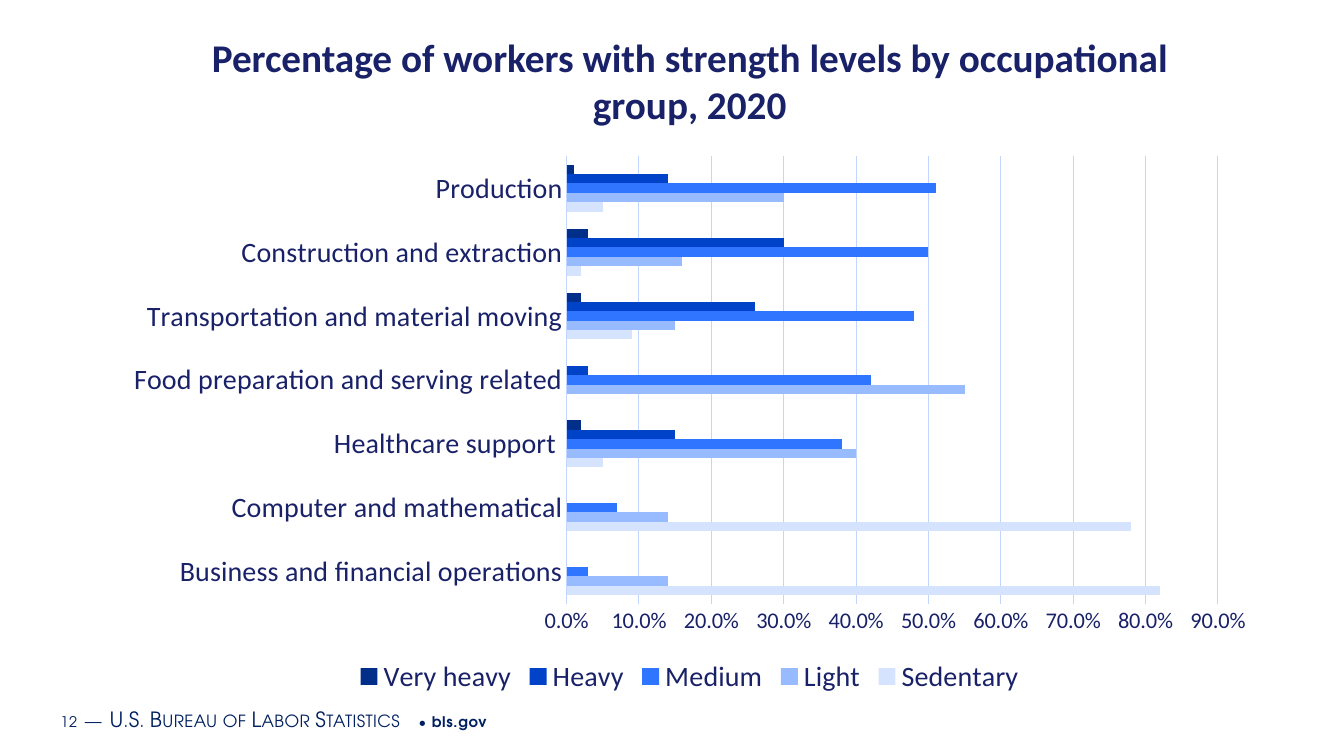
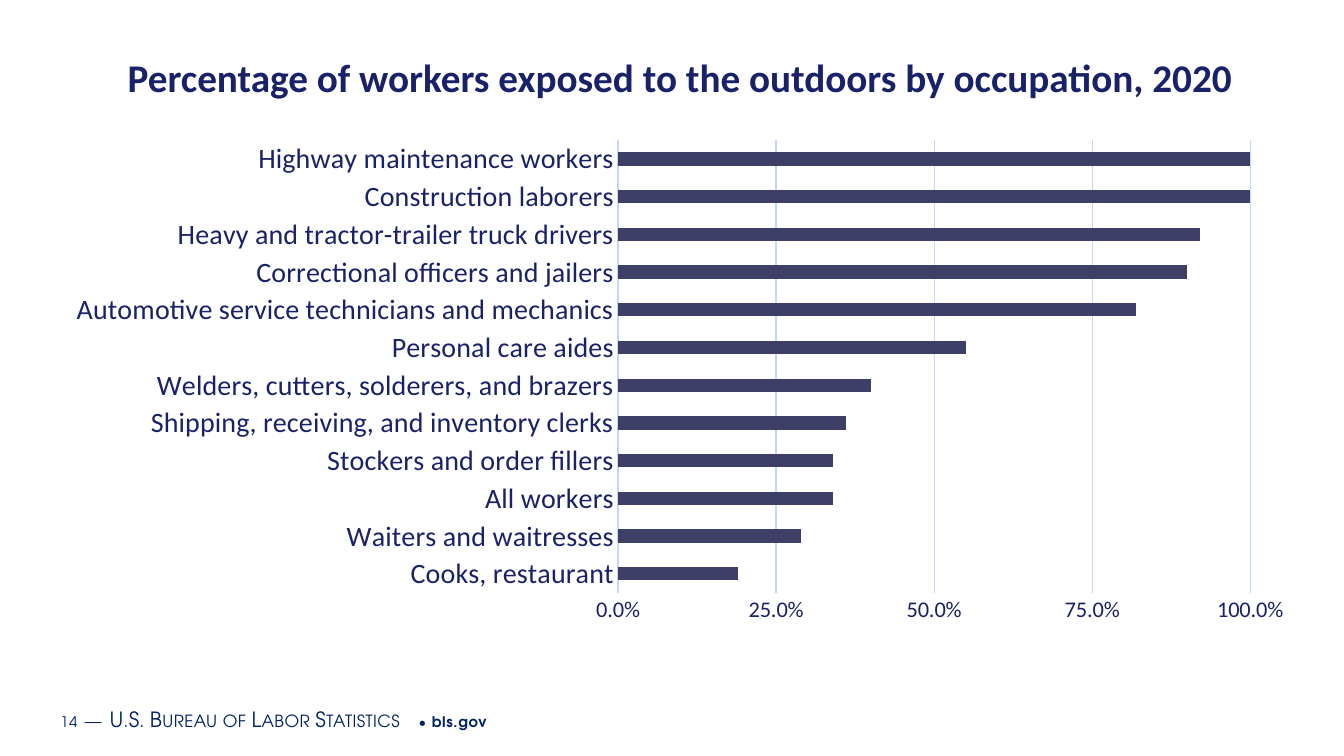
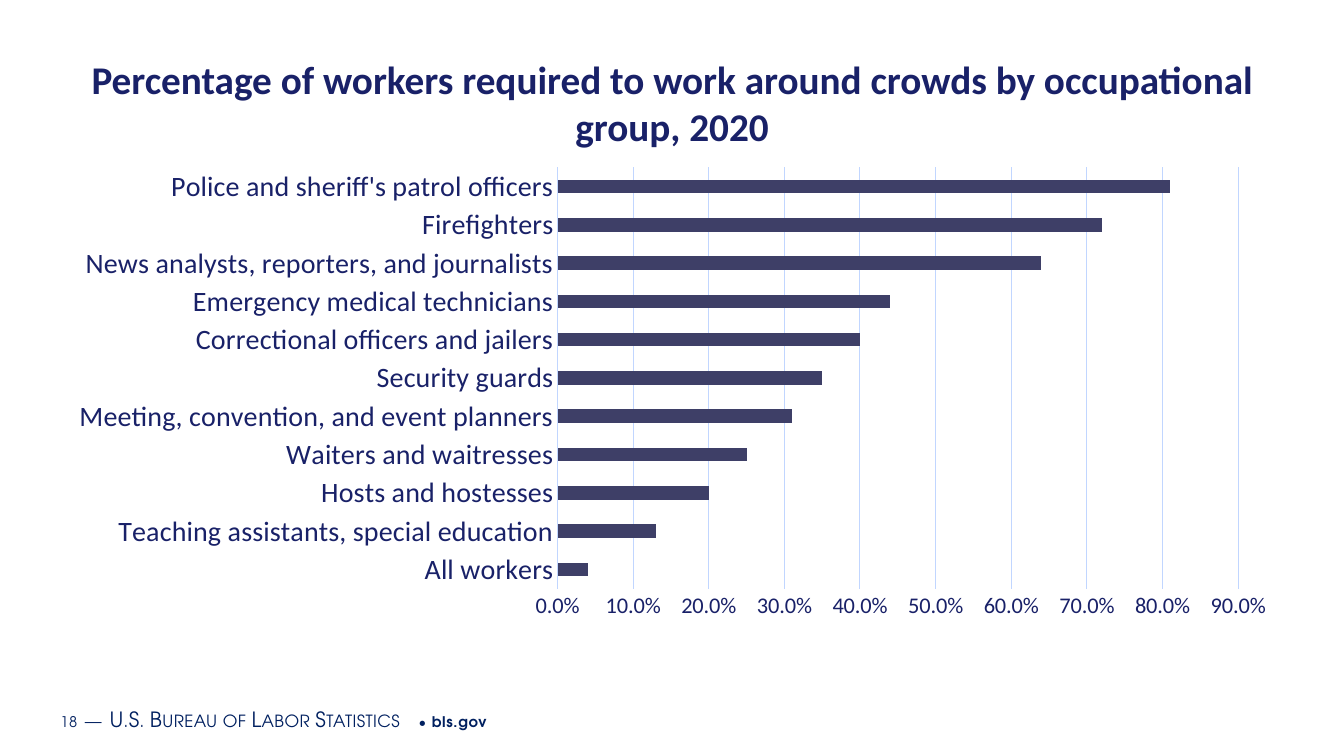
from lxml.etree import SubElement
from pptx import Presentation
from pptx.chart.data import CategoryChartData
from pptx.dml.color import RGBColor
from pptx.enum.chart import XL_CHART_TYPE, XL_LEGEND_POSITION, XL_TICK_MARK
from pptx.enum.text import MSO_ANCHOR, MSO_AUTO_SIZE, PP_ALIGN
from pptx.oxml.ns import qn
from pptx.util import Inches, Pt

COLOURS = {
    "title": "192168", "footer": "002060", "grid": "C1D6FF", "bar": "3E3F67",
    "Sedentary": "D6E3FF", "Light": "98BAFF", "Medium": "3075FF",
    "Heavy": "0042C8", "Very heavy": "002E89",
}
CHART_FONT = "Calibri"
FOOTER_FONT = "TeX Gyre Adventor"
FOOTER_BOX = (0.53, 6.93, 8.47, 0.4)

SLIDES = [
    {
        "number": "12",
        "title": "Percentage of workers with strength levels by occupational group, 2020",
        "title_box": (1.61, 0.16, 10.46, 1.28), "anchor": MSO_ANCHOR.MIDDLE,
        "chart_box": (1.1, 1.44, 11.48, 5.5), "plot_box": (5.62, 1.55, 6.46, 4.44),
        "scale": (0.9, 0.1, "0.0%"), "legend": True,
        "categories": [
            "Business and financial operations", "Computer and mathematical",
            "Healthcare support ", "Food preparation and serving related",
            "Transportation and material moving", "Construction and extraction",
            "Production"],
        "series": {
            "Sedentary": [0.82, 0.78, 0.05, None, 0.09, 0.02, 0.05],
            "Light": [0.14, 0.14, 0.4, 0.55, 0.15, 0.16, 0.3],
            "Medium": [0.03, 0.07, 0.38, 0.42, 0.48, 0.5, 0.51],
            "Heavy": [None, None, 0.15, 0.03, 0.26, 0.3, 0.14],
            "Very heavy": [None, None, 0.02, None, 0.02, 0.03, 0.01]},
    },
    {
        "number": "14",
        "title": "Percentage of workers exposed to the outdoors by occupation, 2020",
        "title_box": (0.92, 0.49, 11.64, 0.54), "anchor": MSO_ANCHOR.MIDDLE,
        "chart_box": (0.51, 1.29, 12.46, 5), "plot_box": (6.13, 1.39, 6.27, 4.49),
        "scale": (100, 25, r"0.0\%"), "legend": False,
        "categories": [
            "Cooks, restaurant", "Waiters and waitresses", "All workers",
            "Stockers and order fillers", "Shipping, receiving, and inventory clerks",
            "Welders, cutters, solderers, and brazers", "Personal care aides",
            "Automotive service technicians and mechanics",
            "Correctional officers and jailers", "Heavy and tractor-trailer truck drivers",
            "Construction laborers", "Highway maintenance workers"],
        "series": {"Series 1": [19, 29, 34, 34, 36, 40, 55, 82, 90, 92, 100, 100]},
    },
    {
        "number": "18",
        "title": "Percentage of workers required to work around crowds "
                 "by occupational group, 2020",
        "title_box": (0.54, 0.5, 12.25, 0.88), "anchor": MSO_ANCHOR.TOP,
        "chart_box": (0.54, 1.57, 12.25, 4.68), "plot_box": (5.53, 1.66, 6.75, 4.18),
        "scale": (90, 10, r"0.0\%"), "legend": False,
        "categories": [
            "All workers", "Teaching assistants, special education",
            "Hosts and hostesses", "Waiters and waitresses",
            "Meeting, convention, and event planners", "Security guards",
            "Correctional officers and jailers", "Emergency medical technicians",
            "News analysts, reporters, and journalists", "Firefighters",
            "Police and sheriff's patrol officers"],
        "series": {"Series 1": [4, 13, 20, 25, 31, 35, 40, 44, 64, 72, 81]},
    },
]


def set_values(target, **values):
    """Set each named attribute of the target."""
    for name, value in values.items():
        setattr(target, name, value)


def style_font(font, size, colour, name=CHART_FONT, bold=False):
    """Give a font its size, colour, family and weight."""
    set_values(font, size=Pt(size), name=name, bold=bold)
    font.color.rgb = RGBColor.from_string(COLOURS[colour])


def style_line(line):
    """Draw a chart line in the thin grid style."""
    line.color.rgb = RGBColor.from_string(COLOURS["grid"])
    line.width = Pt(0.75)


def add_title(page, text, box, anchor):
    """Place and format the title placeholder."""
    title = page.shapes.title
    left, top, width, height = map(Inches, box)
    set_values(title, left=left, top=top, width=width, height=height)
    frame = title.text_frame
    set_values(frame, word_wrap=True, auto_size=MSO_AUTO_SIZE.NONE, vertical_anchor=anchor)
    para = frame.paragraphs[0]
    para.alignment = PP_ALIGN.CENTER
    span = para.add_run()
    span.text = text
    style_font(span.font, 28, "title", bold=True)


def add_footer(page, number, box):
    """Write the page number, agency and address on one line."""
    frame = page.shapes.add_textbox(*map(Inches, box)).text_frame
    set_values(frame, word_wrap=True, vertical_anchor=MSO_ANCHOR.MIDDLE,
               margin_left=Inches(0.07), margin_right=Inches(0.07),
               margin_top=Inches(0.04), margin_bottom=Inches(0.04))
    para = frame.paragraphs[0]
    for text, size, small, bold in (
            (number, 10.5, False, False),
            (" ", 16, False, False),
            ("—", 15, True, False),
            (" ", 16, False, False),
            ("U.S. Bureau of Labor Statistics", 15, True, False),
            (" • ", 10.5, False, False),
            ("bls.gov", 10.5, False, True)):
        span = para.add_run()
        span.text = text
        style_font(span.font, size, "footer", FOOTER_FONT, bold)
        properties = span._r.get_or_add_rPr()
        properties.set("spc", "30" if small else "50")
        if small:
            properties.set("cap", "small")


def place_plot(chart, chart_box, plot_box):
    """Fix the inner plot area inside the chart's box."""
    area = chart._chartSpace.find(".//" + qn("c:plotArea"))
    for old in area.findall(qn("c:layout")):
        area.remove(old)
    layout = SubElement(area, qn("c:layout"))
    area.insert(0, layout)
    manual = SubElement(layout, qn("c:manualLayout"))
    left, top, width, height = chart_box
    plot_left, plot_top, plot_width, plot_height = plot_box
    for tag, value in (
            ("layoutTarget", "inner"), ("xMode", "edge"), ("yMode", "edge"),
            ("x", (plot_left - left) / width), ("y", (plot_top - top) / height),
            ("w", plot_width / width), ("h", plot_height / height)):
        SubElement(manual, qn("c:" + tag)).set("val", str(value))


def style_axes(chart, maximum, step, number_format):
    """Format the category and value axes."""
    for axis, size in ((chart.category_axis, 20), (chart.value_axis, 16)):
        set_values(axis, major_tick_mark=XL_TICK_MARK.NONE, minor_tick_mark=XL_TICK_MARK.NONE)
        style_font(axis.tick_labels.font, size, "title")
    style_line(chart.category_axis.format.line)
    axis = chart.value_axis
    set_values(axis, minimum_scale=0, maximum_scale=maximum, major_unit=step,
               has_major_gridlines=True)
    set_values(axis.tick_labels, number_format=number_format, number_format_is_linked=False)
    style_line(axis.major_gridlines.format.line)
    axis.format.line.fill.background()


def add_bar_chart(page, content):
    """Add the clustered bar chart with its axes and legend."""
    maximum, step, number_format = content["scale"]
    data = CategoryChartData(number_format=number_format)
    data.categories = content["categories"]
    for name, values in content["series"].items():
        data.add_series(name, values)
    box = content["chart_box"]
    chart = page.shapes.add_chart(
        XL_CHART_TYPE.BAR_CLUSTERED, *map(Inches, box), data).chart
    set_values(chart, has_title=False, has_legend=content["legend"])
    style_font(chart.font, 10, "footer")
    plot = chart.plots[0]
    set_values(plot, gap_width=182, overlap=0, vary_by_categories=False)
    for series in plot.series:
        fill = series.format.fill
        fill.solid()
        fill.fore_color.rgb = RGBColor.from_string(COLOURS.get(series.name, COLOURS["bar"]))
    style_axes(chart, maximum, step, number_format)
    if chart.has_legend:
        set_values(chart.legend, position=XL_LEGEND_POSITION.BOTTOM, include_in_layout=False)
        style_font(chart.legend.font, 20, "title")
    place_plot(chart, box, content["plot_box"])


def main():
    """Build the deck and save it."""
    deck = Presentation()
    set_values(deck, slide_width=Inches(13.33), slide_height=Inches(7.5))
    for content in SLIDES:
        page = deck.slides.add_slide(deck.slide_layouts[5])
        add_footer(page, content["number"], FOOTER_BOX)
        add_title(page, content["title"], content["title_box"], content["anchor"])
        add_bar_chart(page, content)
    deck.save("out.pptx")


if __name__ == "__main__":
    main()
